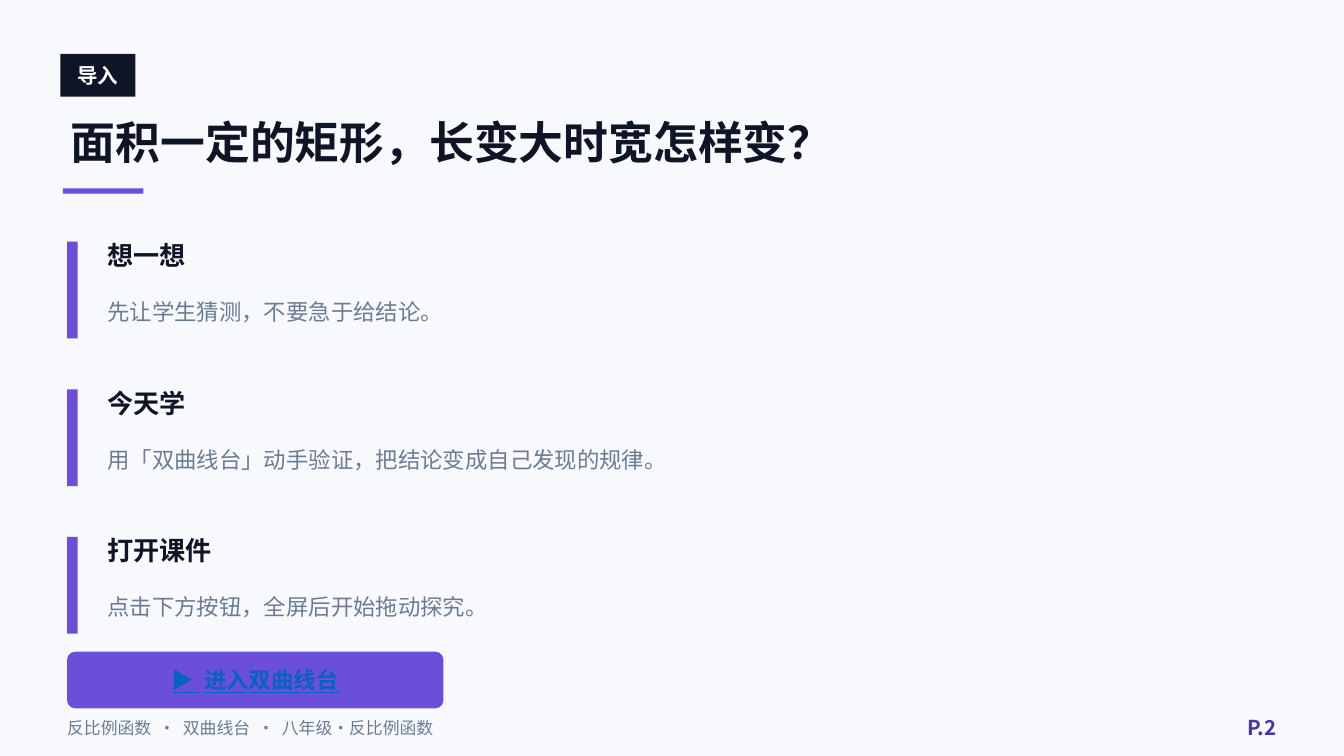
import pptx
import pptx.util
import pptx.dml.color
import pptx.enum.shapes
import pptx.enum.text
import pptx.oxml.ns
import lxml.etree

Cm = pptx.util.Cm
Align = pptx.enum.text.PP_ALIGN
Kind = pptx.enum.shapes.MSO_SHAPE

FONT = "Noto Sans CJK SC"
HUES = {
    "back": "F7F9FC",
    "ink": "0D1526",
    "white": "FFFFFF",
    "main": "6B4FD8",
    "deep": "4A32A8",
    "grey": "6A7C95",
    "link": "0563C1",
}

TAG = "导入"
TITLE = "面积一定的矩形，长变大时宽怎样变？"
STEPS = [
    ("想一想", "先让学生猜测，不要急于给结论。"),
    ("今天学", "用「双曲线台」动手验证，把结论变成自己发现的规律。"),
    ("打开课件", "点击下方按钮，全屏后开始拖动探究。"),
]
BUTTON = "▶ 进入双曲线台"
FOOT = "反比例函数 · 双曲线台 · 八年级·反比例函数"
PAGE = "P.2"

TOP, PITCH = 4.57, 2.79  # first step bar and step distance, cm


def tint(name):
    return pptx.dml.color.RGBColor.from_string(HUES[name])


def write(shape, text, size, hue, bold=False, align=Align.LEFT, line=False):
    """Fill a shape with one paragraph, styled and centred vertically."""
    frame = shape.text_frame
    frame.word_wrap = True
    frame.vertical_anchor = pptx.enum.text.MSO_ANCHOR.MIDDLE
    frame.margin_top = frame.margin_bottom = 0
    para = frame.paragraphs[0]
    para.alignment = align
    for i, part in enumerate(text.split(" ")):
        if i:
            gap = para.add_run()
            gap.text = " "
            # widen each word gap by a quarter em
            gap._r.get_or_add_rPr().set("spc", str(size * 22))
        para.add_run().text = part
    for run in para.runs:
        font = run.font
        font.name, font.size = FONT, pptx.util.Pt(size)
        font.bold, font.underline = bold, line
        font.color.rgb = tint(hue)
        east = lxml.etree.SubElement(
            run._r.get_or_add_rPr(), pptx.oxml.ns.qn("a:ea"))
        east.set("typeface", FONT)


def block(box, hue, kind=Kind.RECTANGLE):
    shape = slide.shapes.add_shape(kind, *map(Cm, box))
    shape.shadow.inherit = False
    shape.fill.solid()
    shape.fill.fore_color.rgb = tint(hue)
    shape.line.fill.background()
    return shape


def label(box, *args, **style):
    write(slide.shapes.add_textbox(*map(Cm, box)), *args, **style)


deck = pptx.Presentation()
deck.slide_width, deck.slide_height = Cm(25.4), Cm(14.29)
slide = deck.slides.add_slide(deck.slide_layouts[6])
slide.background.fill.solid()
slide.background.fill.fore_color.rgb = tint("back")

tag = block((1.14, 1.02, 1.42, 0.81), "ink")
tag.text_frame.margin_left = tag.text_frame.margin_right = 0
write(tag, TAG, 11, "white", bold=True, align=Align.CENTER)
label((1.09, 1.98, 22.86, 1.4), TITLE, 24, "ink", bold=True)
block((1.19, 3.56, 1.52, 0.1), "main")

for i, (head, body) in enumerate(STEPS):
    y = TOP + i * PITCH
    block((1.27, y, 0.2, 1.83), "main")
    label((1.78, y - 0.13, 22.35, 0.76), head, 14, "ink", bold=True)
    label((1.78, y + 0.69, 22.35, 1.27), body, 12, "grey")

button = block((1.27, 12.32, 7.11, 1.07), "main", Kind.ROUNDED_RECTANGLE)
button.adjustments[0] = 0.14
write(button, BUTTON, 12, "link", bold=True, align=Align.CENTER, line=True)

label((1.02, 13.41, 18.29, 0.71), FOOT, 9, "grey")
label((22.86, 13.36, 1.52, 0.76), PAGE, 11, "deep", bold=True,
      align=Align.RIGHT)

deck.save("out.pptx")
